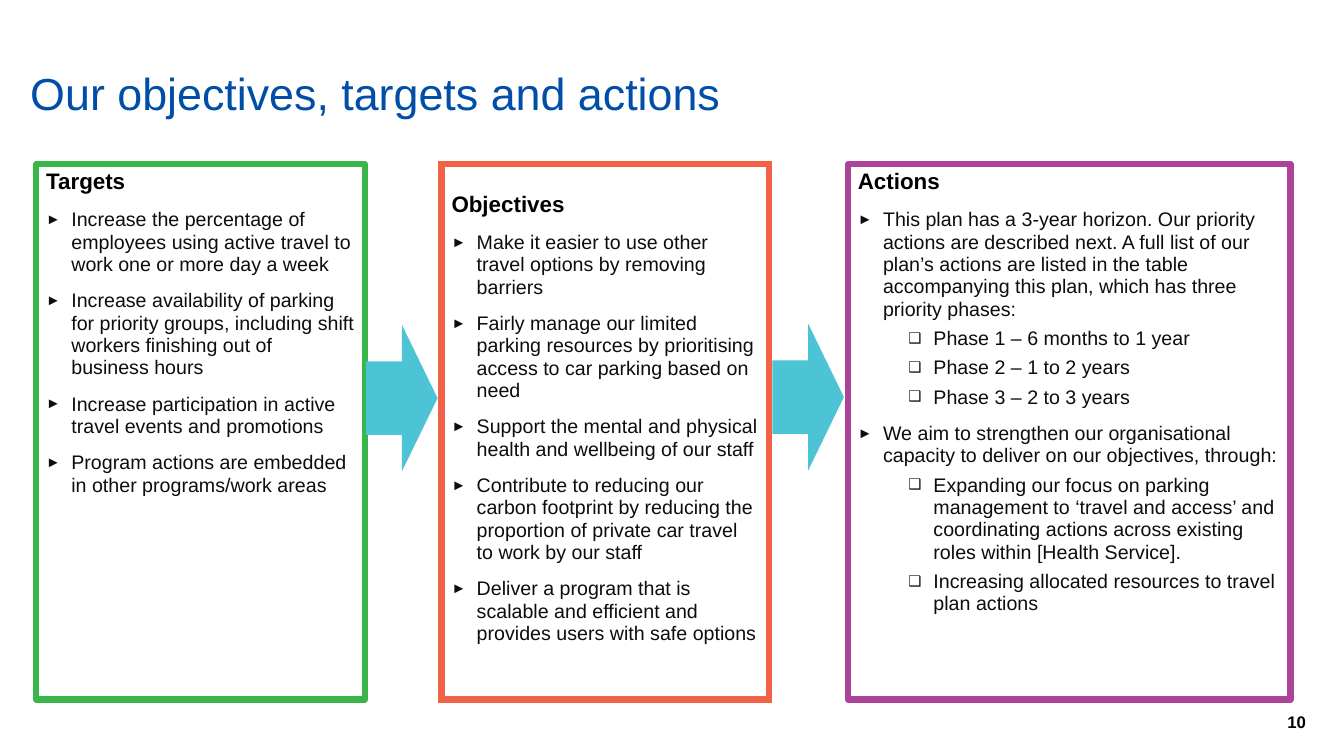
from lxml import etree
from pptx import Presentation
from pptx import util as u
from pptx.dml.color import RGBColor
from pptx.enum import shapes, text
from pptx.oxml.ns import qn

BULLETS = [("►", 0.25, 10), ("❑", 0.75, 5)]

TARGETS = [
    (0, "Increase the percentage of employees using active travel to work one or more day a week"),
    (0, "Increase availability of parking for priority groups, including shift workers "
        "finishing out of business hours"),
    (0, "Increase participation in active travel events and promotions"),
    (0, "Program actions are embedded in other programs/work areas"),
]
OBJECTIVES = [
    (0, "Make it easier to use other travel options by removing barriers"),
    (0, "Fairly manage our limited parking resources by prioritising access to car parking "
        "based on need"),
    (0, "Support the mental and physical health and wellbeing of our staff"),
    (0, "Contribute to reducing our carbon footprint by reducing the proportion of private "
        "car travel to work by our staff"),
    (0, "Deliver a program that is scalable and efficient and provides users with safe options"),
]
ACTIONS = [
    (0, "This plan has a 3-year horizon. Our priority actions are described next. A full list "
        "of our plan’s actions are listed in the table accompanying this plan, which has three "
        "priority phases:"),
    (1, "Phase 1 – 6 months to 1 year"),
    (1, "Phase 2 – 1 to 2 years"),
    (1, "Phase 3 – 2 to 3 years"),
    (0, "We aim to strengthen our organisational capacity to deliver on our objectives, through:"),
    (1, "Expanding our focus on parking management to ‘travel and access’ and coordinating "
        "actions across existing roles within [Health Service]."),
    (1, "Increasing allocated resources to travel plan actions"),
]


def rgb(value):
    return RGBColor.from_string(value)


def write(p, content, size=14, color="0D0D0D", bold=False, level=None, spacing=0.95):
    if level is not None:
        char, indent, before = BULLETS[level]
        pPr = p._p.get_or_add_pPr()
        pPr.set("marL", str(u.Inches(indent)))
        pPr.set("indent", str(u.Inches(-0.25)))
        etree.SubElement(pPr, qn("a:buSzPct")).set("val", "75000")
        etree.SubElement(pPr, qn("a:buFont")).set("typeface", "Arial")
        etree.SubElement(pPr, qn("a:buChar")).set("char", char)
        p.level = level
        p.space_before = u.Pt(before)
    p.alignment = text.PP_ALIGN.LEFT
    p.line_spacing = spacing
    r = p.add_run()
    r.text = content
    r.font.name = "Arial"
    r.font.size = u.Pt(size)
    r.font.bold = bold
    r.font.color.rgb = rgb(color)


class Deck:
    """Holds the presentation, its current slide and the shared style."""

    ARROW = "4CC4D5"
    TITLE = "004EA8"
    BLACK = "000000"

    def __init__(self):
        self.prs = Presentation()
        self.prs.slide_width = u.Inches(13.33)
        self.prs.slide_height = u.Inches(7.5)
        self.s = self.prs.slides.add_slide(self.prs.slide_layouts[5])

    def title(self, content):
        sp = self.s.shapes.title
        sp.left, sp.top, sp.width, sp.height = map(u.Inches, (0.2, 0.4, 12.94, 0.85))
        tf = sp.text_frame
        tf.auto_size = text.MSO_AUTO_SIZE.NONE
        tf.vertical_anchor = text.MSO_ANCHOR.BOTTOM
        write(tf.paragraphs[0], content, size=32, color=self.TITLE)

    def shape(self, kind, *box):
        sp = self.s.shapes.add_shape(kind, *map(u.Inches, box))
        sp.shadow.inherit = False
        return sp

    def panel(self, left, width, color, heading, items, join="round", middle=False):
        sp = self.shape(shapes.MSO_SHAPE.RECTANGLE, left, 1.63, width, 5.31)
        sp.fill.background()
        sp.line.color.rgb = rgb(color)
        sp.line.width = u.Pt(4.5)
        etree.SubElement(sp.line._get_or_add_ln(), qn(f"a:{join}"))
        tf = sp.text_frame
        tf.word_wrap = True
        tf.vertical_anchor = text.MSO_ANCHOR.MIDDLE if middle else text.MSO_ANCHOR.TOP
        if middle:
            tf.margin_bottom = u.Inches(0.33)
        write(tf.paragraphs[0], heading, size=16, color=self.BLACK, bold=True,
              spacing=1.0 if middle else 0.95)
        for level, item in items:
            write(tf.add_paragraph(), item, level=level)

    def arrow(self, left, top):
        sp = self.shape(shapes.MSO_SHAPE.RIGHT_ARROW, left, top, 0.71, 1.46)
        sp.fill.solid()
        sp.fill.fore_color.rgb = rgb(self.ARROW)
        sp.line.fill.background()

    def page_number(self, number):
        sp = self.s.shapes.add_textbox(*map(u.Inches, (12.67, 7.01, 0.46, 0.3)))
        write(sp.text_frame.paragraphs[0], number, size=12, color=self.BLACK, bold=True,
              spacing=1.0)


def main():
    deck = Deck()
    deck.page_number("10")
    deck.title("Our objectives, targets and actions")
    deck.panel(0.36, 3.26, "39B54A", "Targets", TARGETS)
    deck.arrow(3.63, 3.22)
    deck.panel(4.38, 3.25, "F16247", "Objectives", OBJECTIVES, join="miter", middle=True)
    deck.arrow(7.66, 3.21)
    deck.panel(8.41, 4.39, "AD4398", "Actions", ACTIONS)
    deck.prs.save("out.pptx")


if __name__ == "__main__":
    main()
